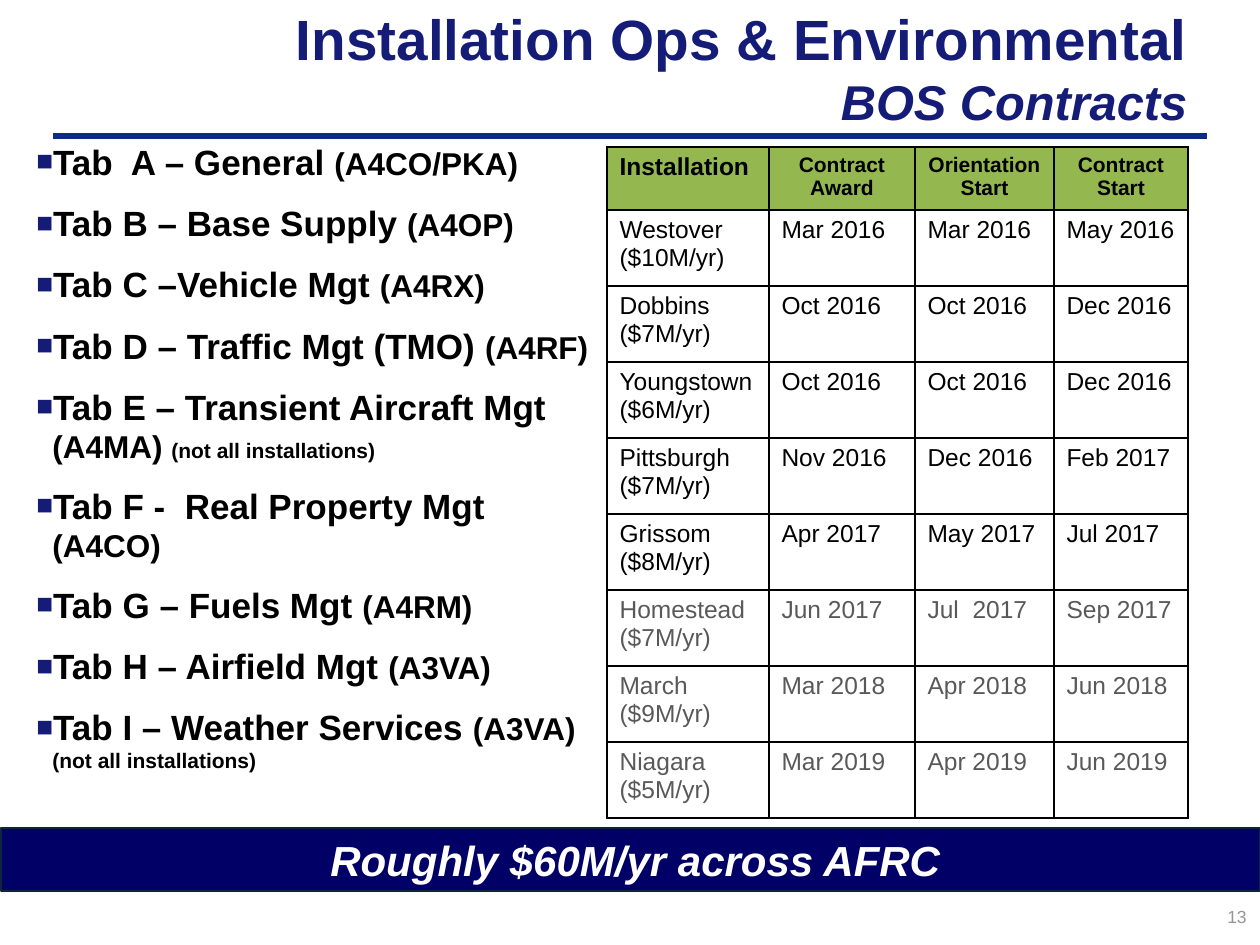
from dataclasses import dataclass

from lxml.etree import SubElement
from pptx import Presentation
from pptx.dml.color import RGBColor
from pptx.enum.shapes import MSO_CONNECTOR, MSO_SHAPE
from pptx.enum.text import MSO_ANCHOR, MSO_AUTO_SIZE, PP_ALIGN
from pptx.oxml.ns import qn
from pptx.util import Emu, Pt

PX_PER_INCH = 126


def px(length):
    return Emu(round(length * 914400 / PX_PER_INCH))


@dataclass(frozen=True)
class Theme:
    font: str = "Arial"
    navy: str = "151C77"
    rule: str = "0C2D83"
    banner: str = "000066"
    banner_edge: str = "0F243E"
    header: str = "95B74F"
    white: str = "FFFFFF"
    black: str = "000000"
    future: str = "595959"
    page: str = "969696"
    title_size: float = 32.4
    subtitle_size: float = 27.9
    banner_size: int = 24
    tab_size: int = 20
    office_size: int = 18
    table_size: int = 14
    small_size: int = 12
    page_size: int = 10


class SlideBuilder:
    def __init__(self, slide, theme):
        self.slide = slide
        self.theme = theme

    def style(self, run, size, color, bold=False, italic=False):
        font = run.font
        font.name, font.size = self.theme.font, Pt(size)
        font.bold, font.italic = bold, italic
        font.color.rgb = RGBColor.from_string(color)

    def title(self, heading, subheading, left, top, width, height):
        title = self.slide.shapes.title
        title.left, title.top = px(left), px(top)
        title.width, title.height = px(width), px(height)
        frame = title.text_frame
        frame.text = f"{heading}\v{subheading}"
        frame.auto_size = MSO_AUTO_SIZE.NONE
        frame.vertical_anchor = MSO_ANCHOR.MIDDLE
        paragraph = frame.paragraphs[0]
        paragraph.alignment = PP_ALIGN.RIGHT
        main, sub = paragraph.runs
        self.style(main, self.theme.title_size, self.theme.navy, bold=True)
        self.style(sub, self.theme.subtitle_size, self.theme.navy, bold=True, italic=True)

    def rule(self, left, right, y):
        rule = self.slide.shapes.add_connector(
            MSO_CONNECTOR.STRAIGHT, px(left), px(y), px(right), px(y))
        rule.line.color.rgb = RGBColor.from_string(self.theme.rule)
        rule.line.width = Pt(3)
        SubElement(rule._element.spPr, qn("a:effectLst"))

    def text_box(self, left, top, width, height):
        frame = self.slide.shapes.add_textbox(
            px(left), px(top), px(width), px(height)).text_frame
        frame.word_wrap = True
        return frame

    def bullet(self, paragraph, indent):
        properties = paragraph._p.get_or_add_pPr()
        properties.set("marL", str(px(indent)))
        properties.set("indent", str(-px(indent)))
        color = SubElement(properties, qn("a:buClr"))
        SubElement(color, qn("a:srgbClr"), val=self.theme.navy)
        SubElement(properties, qn("a:buSzPct"), val="80000")
        SubElement(properties, qn("a:buFont"), typeface=self.theme.font)
        SubElement(properties, qn("a:buChar"), char="■")

    def bullets(self, items, left, top, width, height):
        frame = self.text_box(left, top, width, height)
        sizes = (self.theme.tab_size, self.theme.office_size, self.theme.small_size)
        for index, parts in enumerate(items):
            paragraph = frame.add_paragraph() if index else frame.paragraphs[0]
            self.bullet(paragraph, 16)
            if index:
                paragraph.space_before = Pt(11)
            for part, size in zip(parts, sizes):
                run = paragraph.add_run()
                run.text = part
                self.style(run, size, self.theme.black, bold=True)

    def cell(self, cell, text, fill, size, color, bold=False, align=PP_ALIGN.LEFT):
        cell.text = text
        for paragraph in cell.text_frame.paragraphs:
            paragraph.alignment = align
            for run in paragraph.runs:
                self.style(run, size, color, bold)
        properties = cell._tc.get_or_add_tcPr()
        for side in ("lnL", "lnR", "lnT", "lnB"):
            border = SubElement(properties, qn(f"a:{side}"), w=str(Pt(1)))
            solid = SubElement(border, qn("a:solidFill"))
            SubElement(solid, qn("a:srgbClr"), val=self.theme.black)
        cell.fill.solid()
        cell.fill.fore_color.rgb = RGBColor.from_string(fill)

    def table(self, headings, rows, future_from, left, top, widths, header_height, row_height):
        theme = self.theme
        heights = [header_height] + [row_height] * len(rows)
        table = self.slide.shapes.add_table(
            len(heights), len(widths), px(left), px(top),
            px(sum(widths)), px(sum(heights))).table
        for column, width in zip(table.columns, widths):
            column.width = px(width)
        for row, height in zip(table.rows, heights):
            row.height = px(height)
        for index, heading in enumerate(headings):
            size = theme.small_size if index else theme.table_size
            align = PP_ALIGN.CENTER if index else PP_ALIGN.LEFT
            self.cell(table.cell(0, index), heading, theme.header, size,
                      theme.black, True, align)
        for row_index, row in enumerate(rows):
            color = theme.future if row_index >= future_from else theme.black
            for index, text in enumerate(row):
                cell = table.cell(row_index + 1, index)
                self.cell(cell, text, theme.white, theme.table_size, color)
                cell.margin_right = px(6)

    def banner(self, text, left, top, width, height):
        banner = self.slide.shapes.add_shape(
            MSO_SHAPE.RECTANGLE, px(left), px(top), px(width), px(height))
        banner.shadow.inherit = False
        banner.fill.solid()
        banner.fill.fore_color.rgb = RGBColor.from_string(self.theme.banner)
        banner.line.color.rgb = RGBColor.from_string(self.theme.banner_edge)
        banner.line.width = Pt(0.75)
        frame = banner.text_frame
        frame.text = text
        frame.margin_left = px(22)
        frame.vertical_anchor = MSO_ANCHOR.MIDDLE
        frame.paragraphs[0].alignment = PP_ALIGN.CENTER
        self.style(frame.paragraphs[0].runs[0], self.theme.banner_size,
                   self.theme.white, bold=True, italic=True)

    def page_number(self, number, left, top, width, height):
        frame = self.text_box(left, top, width, height)
        frame.text = number
        frame.paragraphs[0].alignment = PP_ALIGN.RIGHT
        self.style(frame.paragraphs[0].runs[0], self.theme.page_size, self.theme.page)


TABS = [
    ("Tab  A – General ", "(A4CO/PKA)"),
    ("Tab B – Base Supply ", "(A4OP)"),
    ("Tab C –Vehicle Mgt ", "(A4RX)"),
    ("Tab D – Traffic Mgt (TMO) ", "(A4RF)"),
    ("Tab E – Transient Aircraft Mgt ", "(A4MA) ", "(not all installations)"),
    ("Tab F -  Real Property Mgt ", "(A4CO)"),
    ("Tab G – Fuels Mgt ", "(A4RM)"),
    ("Tab H – Airfield Mgt ", "(A3VA)"),
    ("Tab I – Weather Services ", "(A3VA) ", "(not all installations)"),
]
HEADINGS = ["Installation", "Contract Award", "Orientation Start", "Contract Start"]
CONTRACTS = [
    ("Westover\n($10M/yr)", "Mar 2016", "Mar 2016", "May 2016"),
    ("Dobbins\n($7M/yr)", "Oct 2016", "Oct 2016", "Dec 2016"),
    ("Youngstown\n($6M/yr)", "Oct 2016", "Oct 2016", "Dec 2016"),
    ("Pittsburgh\n($7M/yr)", "Nov 2016", "Dec 2016", "Feb 2017"),
    ("Grissom\n($8M/yr)", "Apr 2017", "May 2017", "Jul 2017"),
    ("Homestead\n($7M/yr)", "Jun 2017", "Jul  2017", "Sep 2017"),
    ("March\n($9M/yr)", "Mar 2018", "Apr 2018", "Jun 2018"),
    ("Niagara\n($5M/yr)", "Mar 2019", "Apr 2019", "Jun 2019"),
]


def main():
    deck = Presentation()
    deck.slide_width, deck.slide_height = px(1260), px(945)
    builder = SlideBuilder(deck.slides.add_slide(deck.slide_layouts[5]), Theme())

    # Header and footer rules
    for y in (136, 889):
        builder.rule(53, 1207, y)
    builder.title("Installation Ops & Environmental", "BOS Contracts", 32, 8, 1168, 118)

    # Contract tabs and schedule
    builder.bullets(TABS, 24, 134, 581, 735)
    builder.table(HEADINGS, CONTRACTS, 5, 607, 147, [162, 146, 139, 134], 59, 76)

    # Closing banner and page number
    builder.banner("Roughly $60M/yr across AFRC", 1, 828, 1259, 63)
    builder.page_number("13", 1101, 900, 158, 42)
    deck.save("out.pptx")


if __name__ == "__main__":
    main()
